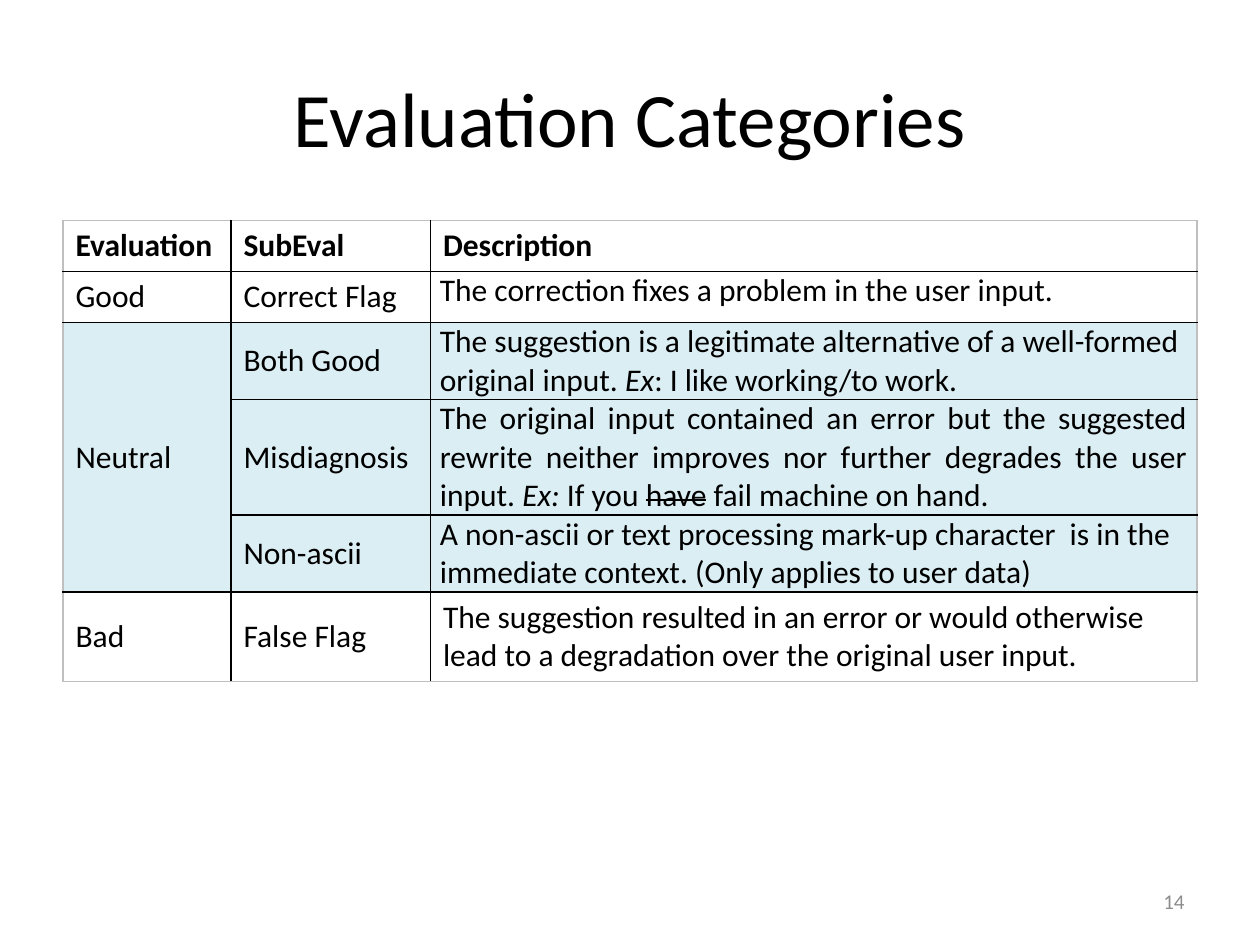
import pptx
import pptx.util
import pptx.dml.color
import pptx.enum.text
import lxml.etree
import pptx.oxml.ns

Pt = pptx.util.Pt
RGBColor = pptx.dml.color.RGBColor
ALIGN = pptx.enum.text.PP_ALIGN
ANCHOR = pptx.enum.text.MSO_ANCHOR
qn = pptx.oxml.ns.qn

BLACK = RGBColor(0x00, 0x00, 0x00)
WHITE = RGBColor(0xFF, 0xFF, 0xFF)
GREY = RGBColor(0x8C, 0x8C, 0x8C)
EDGE_GREY = RGBColor(0xBF, 0xBF, 0xBF)
PALE_BLUE = RGBColor(0xDB, 0xEE, 0xF4)


def write_runs(paragraph, runs, size, color=BLACK, bold=False):
    for text, style in runs:
        run = paragraph.add_run()
        run.text = text
        formats = {"name": "Calibri", "size": Pt(size), "bold": bold, "italic": style == "italic"}
        for name, value in formats.items():
            setattr(run.font, name, value)
        run.font.color.rgb = color
        if style == "strike":
            run._r.get_or_add_rPr().set("strike", "sngStrike")


def add_border(cell, side, color):
    properties = cell._tc.get_or_add_tcPr()
    line = lxml.etree.SubElement(properties, qn(f"a:ln{side}"), w=str(Pt(1)))
    fill = lxml.etree.SubElement(line, qn("a:solidFill"))
    lxml.etree.SubElement(fill, qn("a:srgbClr"), val=str(color))


presentation = pptx.Presentation()
presentation.slide_width = Pt(720)
presentation.slide_height = Pt(540)
slide = presentation.slides.add_slide(presentation.slide_layouts[6])

labels = [
    ("Evaluation Categories", (36, 21.6, 648, 90), 44, BLACK, ALIGN.CENTER),
    ("14", (516, 500.5, 168, 28.75), 12, GREY, ALIGN.RIGHT),
]
for text, bounds, size, color, alignment in labels:
    shape = slide.shapes.add_textbox(*map(Pt, bounds))
    shape.text_frame.word_wrap = True
    shape.text_frame.vertical_anchor = ANCHOR.MIDDLE
    paragraph = shape.text_frame.paragraphs[0]
    paragraph.alignment = alignment
    write_runs(paragraph, [(text, "")], size, color)

rows = [
    ("Evaluation", "SubEval", [("Description", "")]),
    ("Good", "Correct Flag", [("The correction fixes a problem in the user input.", "")]),
    ("Neutral", "Both Good", [
        ("The suggestion is a legitimate alternative of a well-formed original input. ", ""),
        ("Ex", "italic"),
        (": I like working/to work.", ""),
    ]),
    ("", "Misdiagnosis", [
        ("The original input contained an error but the suggested rewrite neither improves "
         "nor further degrades the user input. ", ""),
        ("Ex: ", "italic"),
        ("If you ", ""),
        ("have", "strike"),
        (" fail machine on hand.", ""),
    ]),
    ("", "Non-ascii", [
        ("A non-ascii or text processing mark-up character  is in the immediate context. "
         "(Only applies to user data)", ""),
    ]),
    ("Bad", "False Flag", [
        ("The suggestion resulted in an error or would otherwise lead to a degradation "
         "over the original user input.", ""),
    ]),
]
column_widths = [96, 114, 438]
row_heights = [29.2, 29.2, 44, 66, 44, 51]
neutral_rows = range(2, 5)
tight_rows = range(1, 5)
last_row, last_column = len(rows) - 1, len(column_widths) - 1

table = slide.shapes.add_table(
    len(rows), len(column_widths), Pt(36), Pt(126), Pt(sum(column_widths)), Pt(sum(row_heights))
).table
for name in ("first_row", "horz_banding"):
    setattr(table, name, False)
for column, width in zip(table.columns, column_widths):
    column.width = Pt(width)
for row, height in zip(table.rows, row_heights):
    row.height = Pt(height)

for row_index, (evaluation, subevaluation, description) in enumerate(rows):
    contents = [[(evaluation, "")], [(subevaluation, "")], description]
    for column_index, runs in enumerate(contents):
        cell = table.cell(row_index, column_index)
        outer_edges = {
            "L": column_index == 0,
            "R": column_index == last_column,
            "T": row_index == 0,
            "B": row_index == last_row,
        }
        for side, is_outer in outer_edges.items():
            add_border(cell, side, EDGE_GREY if is_outer else BLACK)
        cell.fill.solid()
        cell.fill.fore_color.rgb = PALE_BLUE if row_index in neutral_rows else WHITE
        is_description = column_index == last_column
        if is_description and row_index in tight_rows:
            margins = {"margin_left": 5.4, "margin_right": 5.4, "margin_top": 0, "margin_bottom": 0}
            for name, value in margins.items():
                setattr(cell, name, Pt(value))
        top_anchored = row_index == 0 or (is_description and row_index in (1, 2, last_row))
        cell.vertical_anchor = ANCHOR.TOP if top_anchored else ANCHOR.MIDDLE
        paragraph = cell.text_frame.paragraphs[0]
        justified = is_description and subevaluation == "Misdiagnosis"
        paragraph.alignment = ALIGN.JUSTIFY if justified else ALIGN.LEFT
        if runs[0][0]:
            write_runs(paragraph, runs, 18, bold=row_index == 0)

table.cell(neutral_rows[0], 0).merge(table.cell(neutral_rows[-1], 0))

presentation.save("out.pptx")
